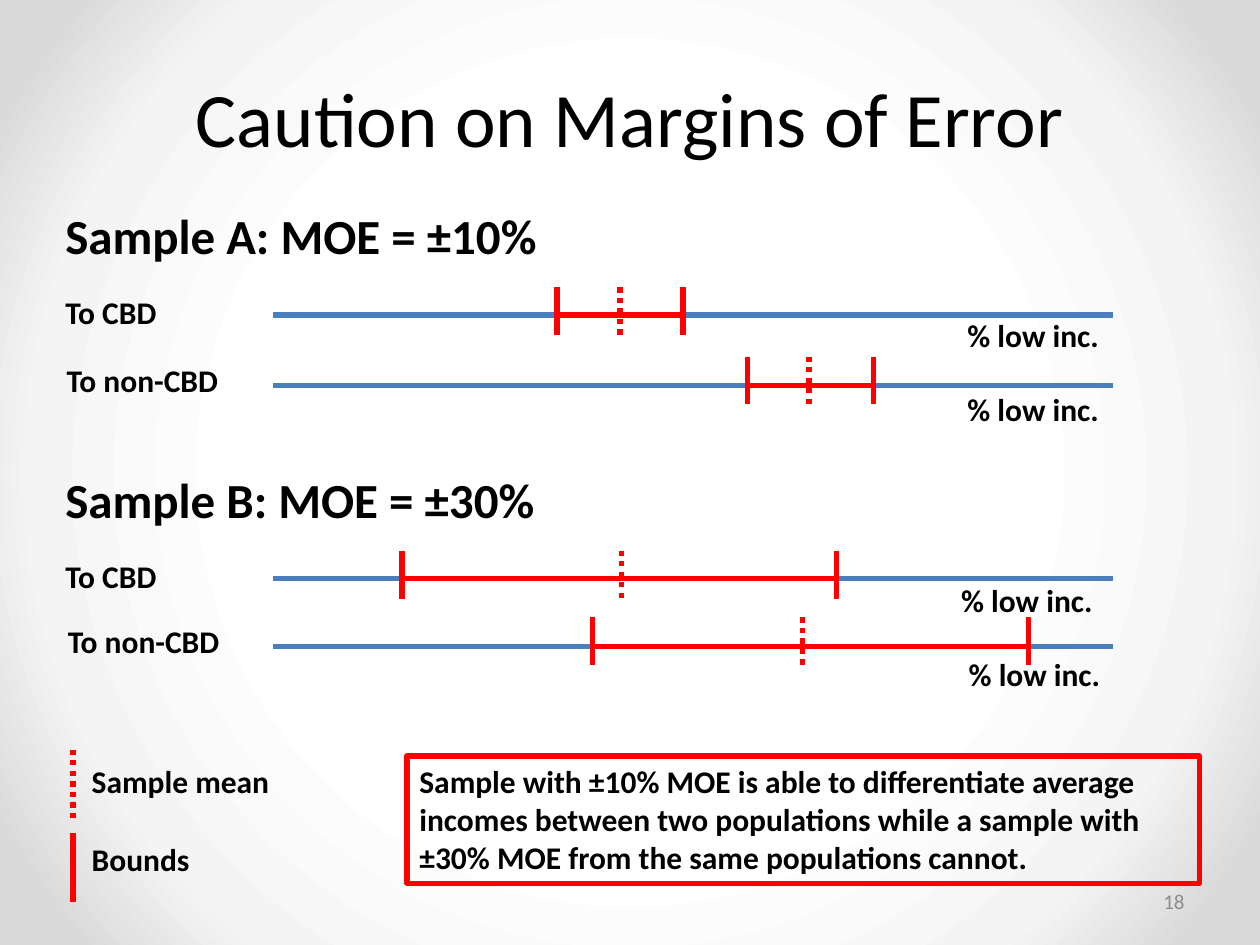
"""Build the slide on margins of error for two samples."""
import lxml.etree
import pptx
import pptx.util
import pptx.dml.color
import pptx.enum.dml
import pptx.enum.shapes
import pptx.enum.text
import pptx.oxml
import pptx.oxml.ns

Inches = pptx.util.Inches
Pt = pptx.util.Pt
rgb = pptx.dml.color.RGBColor.from_string
ALIGN = pptx.enum.text.PP_ALIGN
MIDDLE = pptx.enum.text.MSO_ANCHOR.MIDDLE
qn = pptx.oxml.ns.qn
RED, BLUE, BLACK, GRAY = "FF0000", "4B7EBC", "000000", "8C8C8C"


def add_text(text, x, y, w, h, size=18, bold=True, color=BLACK, align=ALIGN.LEFT, anchor=None, wrap=True):
    sp = s.shapes.add_textbox(Inches(x), Inches(y), Inches(w), Inches(h))
    tf = sp.text_frame
    tf.word_wrap = wrap
    tf.vertical_anchor = anchor
    p = tf.paragraphs[0]
    p.text = text
    p.alignment = align
    p.font.name = "Calibri"
    p.font.size = Pt(size)
    p.font.bold = bold
    p.font.color.rgb = rgb(color)
    return sp


def add_line(x1, y1, x2, y2, color=RED, dotted=False):
    line = s.shapes.add_connector(
        pptx.enum.shapes.MSO_CONNECTOR.STRAIGHT, Inches(x1), Inches(y1), Inches(x2), Inches(y2))
    line.line.color.rgb = rgb(color)
    line.line.width = Pt(3)
    if dotted:
        line.line.dash_style = pptx.enum.dml.MSO_LINE.ROUND_DOT
    lxml.etree.SubElement(line._element.spPr, qn("a:effectLst"))


prs = pptx.Presentation()
prs.slide_width = Inches(10)
prs.slide_height = Inches(7.5)
s = prs.slides.add_slide(prs.slide_layouts[6])

s.background.fill.solid()
bg = s.element.find(".//" + qn("p:bgPr"))
stops = "".join(
    f'<a:gs pos="{pos}000"><a:srgbClr val="{color}"/></a:gs>'
    for pos, color in [(50, "FFFFFF"), (76, "F4F4F4"), (92, "DADADA")])
grad = pptx.oxml.parse_xml(
    f'<a:gradFill {pptx.oxml.ns.nsdecls("a")} rotWithShape="1"><a:gsLst>{stops}</a:gsLst>'
    '<a:path path="circle"><a:fillToRect l="50000" t="50000" r="50000" b="50000"/></a:path></a:gradFill>')
bg.replace(bg[0], grad)

add_text("Caution on Margins of Error", 0.5, 0.3, 9, 1.25, 44, False, align=ALIGN.CENTER, anchor=MIDDLE)
add_text("18", 7.17, 6.95, 2.33, 0.4, 12, False, GRAY, ALIGN.RIGHT, MIDDLE)

samples = [
    ("Sample A: MOE = ±10%", 1.58, [
        ("To CBD", 0.42, 2.28, 2.5, 4.42, 4.92, 5.42, 2.28, 7.58, 2.46),
        ("To non-CBD", 0.43, 2.82, 3.06, 5.93, 6.42, 6.93, 2.83, 7.58, 3.05),
    ]),
    ("Sample B: MOE = ±30%", 3.68, [
        ("To CBD", 0.42, 4.37, 4.59, 3.19, 4.93, 6.64, 4.37, 7.53, 4.56),
        ("To non-CBD", 0.44, 4.89, 5.13, 4.7, 6.37, 8.16, 4.9, 7.59, 5.15),
    ]),
]
for heading, top, rows in samples:
    add_text(heading, 0.42, top, 4.26, 0.57, 28)
    for label, label_x, label_y, y, low, mean, high, tick, unit_x, unit_y in rows:
        add_line(2.17, y, 8.83, y, BLUE)
        add_line(mean, tick, mean, tick + 0.38, dotted=True)
        add_line(low, y, high, y)
        for bound in (low, high):
            add_line(bound, tick, bound, tick + 0.38)
        add_text(label, label_x, label_y, 1.41, 0.4, wrap=False)
        add_text("% low inc.", unit_x, unit_y, 1.26, 0.4, wrap=False)

for label, label_y, y, dotted in [("Sample mean", 6, 5.95, True), ("Bounds", 6.62, 6.61, False)]:
    add_line(0.58, y, 0.58, y + 0.55, dotted=dotted)
    add_text(label, 0.63, label_y, 1.7, 0.4)

sp = add_text(
    "Sample with ±10% MOE is able to differentiate average incomes between two populations "
    "while a sample with ±30% MOE from the same populations cannot.", 3.23, 6, 6.29, 1.01)
sp.line.color.rgb = rgb(RED)
sp.line.width = Pt(3)

prs.save("out.pptx")
